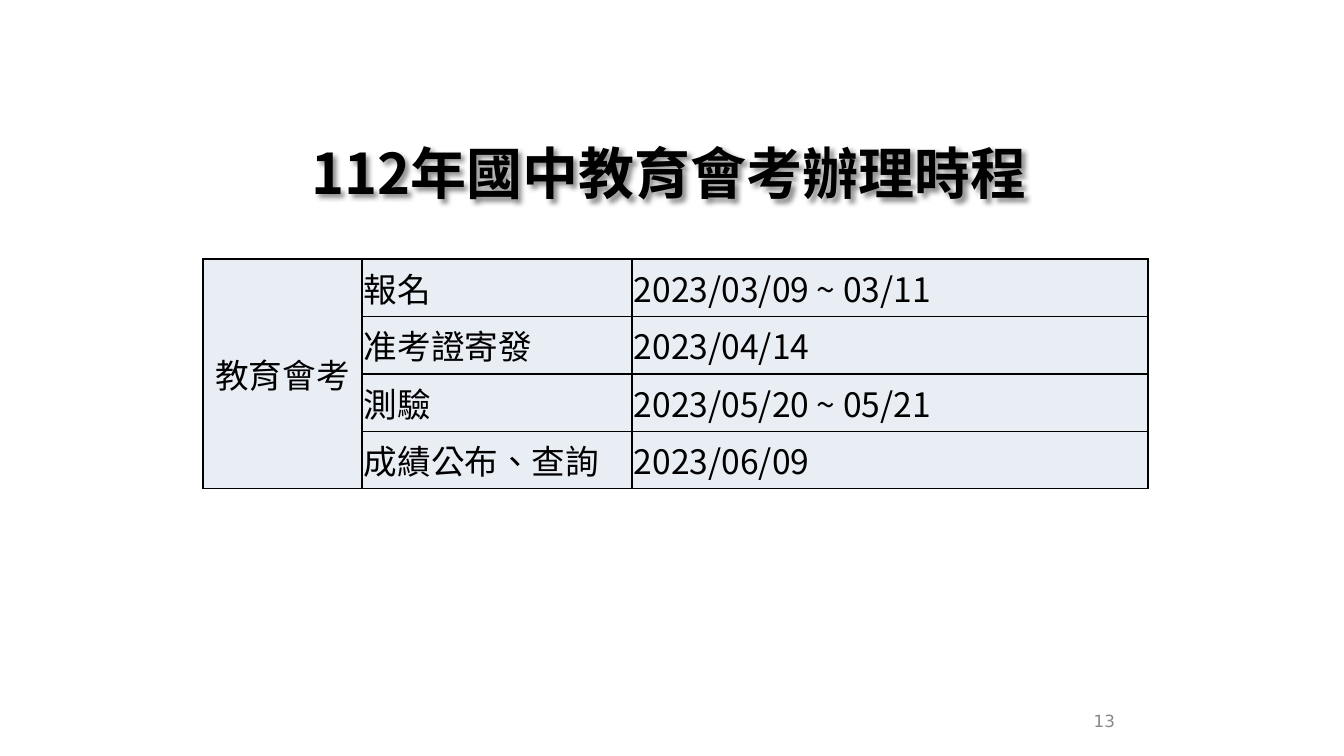
from lxml import etree
from pptx import Presentation
from pptx.dml.color import RGBColor
from pptx.enum.text import MSO_ANCHOR, PP_ALIGN
from pptx.oxml.ns import qn
from pptx.util import Pt

EMU_PER_PX = 914400 / 100.8
BLACK = RGBColor(0x00, 0x00, 0x00)
GREY = RGBColor(0x89, 0x89, 0x89)
PALE_BLUE = RGBColor(0xE9, 0xED, 0xF4)
CJK_FONT = "Noto Sans CJK SC"
NUMBER_FONT = "DejaVu Sans"
MIDDLE = MSO_ANCHOR.MIDDLE
LEFT, CENTER, RIGHT = PP_ALIGN.LEFT, PP_ALIGN.CENTER, PP_ALIGN.RIGHT
TITLE_ONLY = 5

EXAM = "教育會考"
SCHEDULE = [
    ("報名", "2023/03/09 ~ 03/11"),
    ("准考證寄發", "2023/04/14"),
    ("測驗", "2023/05/20 ~ 05/21"),
    ("成績公布、查詢", "2023/06/09"),
]
COLUMN_WIDTHS = (159, 270, 516)


def px(length):
    return round(length * EMU_PER_PX)


def write(frame, text, size, align, font=CJK_FONT, color=BLACK, bold=False):
    frame.text = text
    para = frame.paragraphs[0]
    para.alignment = align
    span = para.runs[0]
    span.font.size = Pt(size)
    span.font.bold = bold
    span.font.color.rgb = color
    span.font.name = font
    properties = span.font._element
    properties.set("lang", "zh-TW")
    etree.SubElement(properties, qn("a:ea"), typeface=font)


def add_soft_shadow(shape):
    effects = etree.SubElement(shape._element.spPr, qn("a:effectLst"))
    shadow = etree.SubElement(effects, qn("a:outerShdw"), blurRad="38100",
                              dist="38100", dir="2700000", algn="tl")
    tint = etree.SubElement(shadow, qn("a:srgbClr"), val="000000")
    etree.SubElement(tint, qn("a:alpha"), val="43000")


def add_borders(cell):
    properties = cell._tc.get_or_add_tcPr()
    for side in ("a:lnL", "a:lnR", "a:lnT", "a:lnB"):
        line = etree.SubElement(properties, qn(side), w=str(Pt(1)))
        fill = etree.SubElement(line, qn("a:solidFill"))
        etree.SubElement(fill, qn("a:srgbClr"), val=str(BLACK))


def place_title(page, left, top, width, height):
    title = page.shapes.title
    title.left, title.top = px(left), px(top)
    title.width, title.height = px(width), px(height)
    frame = title.text_frame
    frame.word_wrap = True
    frame.vertical_anchor = MIDDLE
    write(frame, "112年國中教育會考辦理時程", 40, CENTER, bold=True)
    add_soft_shadow(title)


def place_schedule(page, left, top, width, height):
    table = page.shapes.add_table(len(SCHEDULE), len(COLUMN_WIDTHS), px(left),
                                  px(top), px(width), px(height)).table
    table.first_row = table.horz_banding = False
    for column, column_width in zip(table.columns, COLUMN_WIDTHS):
        column.width = px(column_width)
    for row in table.rows:
        row.height = px(height / len(SCHEDULE))

    # Cell frames and fills
    for cell in table.iter_cells():
        cell.margin_left = cell.margin_right = px(2)
        cell.margin_top = cell.margin_bottom = 0
        cell.vertical_anchor = MIDDLE
        add_borders(cell)
        cell.fill.solid()
        cell.fill.fore_color.rgb = PALE_BLUE

    # Exam name beside its steps and dates
    exam_cell = table.cell(0, 0)
    exam_cell.merge(table.cell(len(SCHEDULE) - 1, 0))
    write(exam_cell.text_frame, EXAM, 24, CENTER)
    for row_index, entries in enumerate(SCHEDULE):
        for column_index, entry in enumerate(entries, start=1):
            write(table.cell(row_index, column_index).text_frame, entry, 24, LEFT)


def place_page_number(page, left, top, width, height):
    box = page.shapes.add_textbox(px(left), px(top), px(width), px(height))
    frame = box.text_frame
    frame.word_wrap = True
    frame.vertical_anchor = MIDDLE
    write(frame, "13", 12, RIGHT, NUMBER_FONT, GREY)


def main():
    deck = Presentation()
    deck.slide_width, deck.slide_height = px(1344), px(756)
    page = deck.slides.add_slide(deck.slide_layouts[TITLE_ONLY])
    place_page_number(page, 890, 701, 235, 40)
    place_schedule(page, 203, 259, sum(COLUMN_WIDTHS), 230)
    place_title(page, 196, 116, 946, 112)
    deck.save("out.pptx")


if __name__ == "__main__":
    main()
